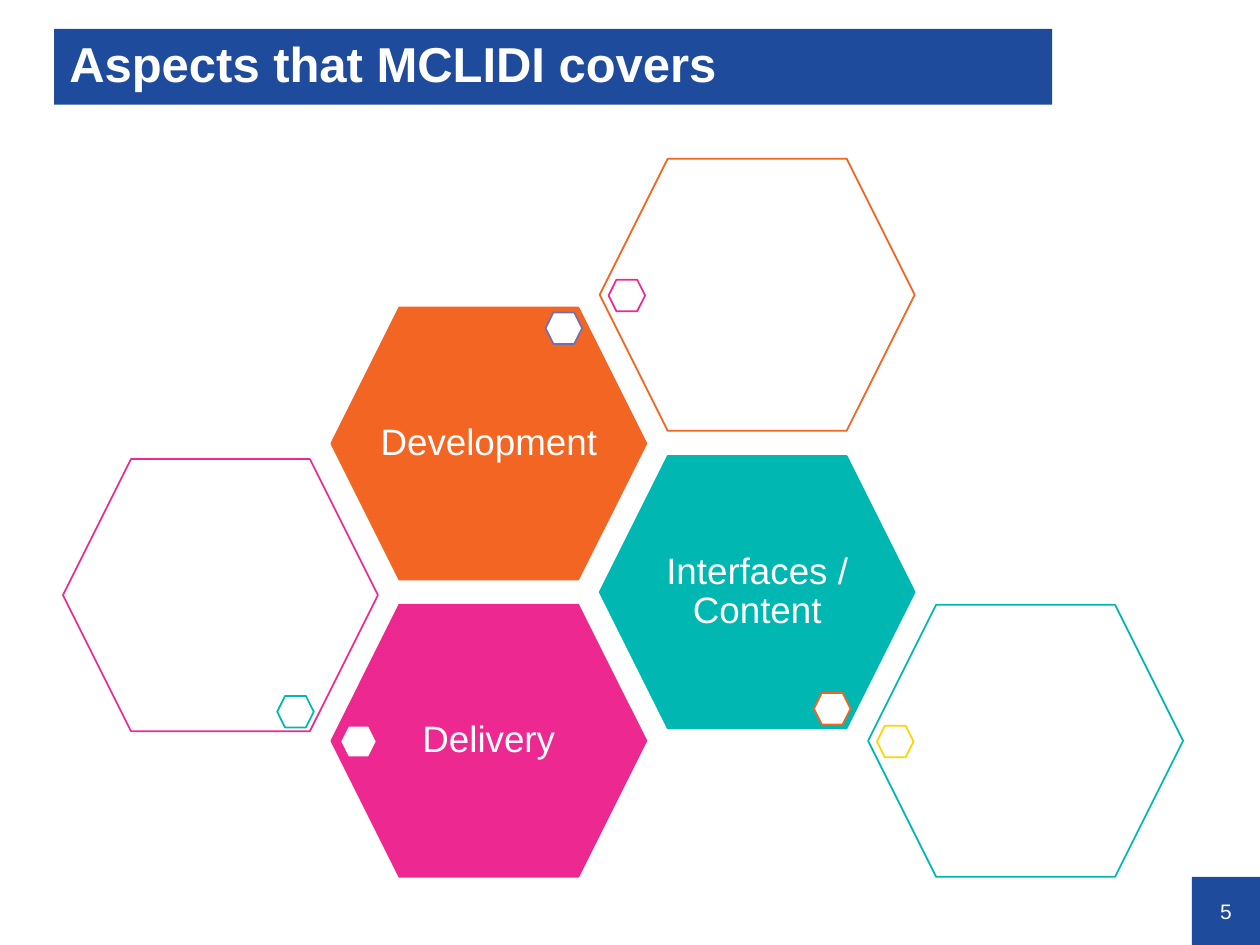
from pptx import Presentation
from pptx.dml.color import RGBColor
from pptx.enum.shapes import MSO_SHAPE as SHAPE
from pptx.enum.text import MSO_ANCHOR as ANCHOR, PP_ALIGN as ALIGN
from pptx.oxml.ns import qn
from pptx.util import Inches, Pt
from lxml import etree

TITLE = "Aspects that MCLIDI covers"
PAGE = "5"

THEME = {
    "font": "Arial",
    "navy": "1E4B9B", "white": "FFFFFF", "pink": "ED2891", "teal": "00B7B2",
    "orange": "F26522", "yellow": "FFD400", "violet": "716FB3",
    "title": 28, "label": 21, "page": 12,
}

# column, row, colour, label, dot corner, dot colour
CELLS = [
    (1, 3, "pink", "Delivery", "left", "pink"),
    (0, 2.02, "pink", None, "bottom", "teal"),
    (2, 2, "teal", "Interfaces / Content", "bottom", "orange"),
    (3, 3, "teal", None, "left", "yellow"),
    (1, 1, "orange", "Development", "top", "violet"),
    (2, 0, "orange", None, "left", "pink"),
]
ORIGIN = (0.5, 1.26)
STEP = (2.13, 1.18)
CELL = (2.5, 2.16)
DOT = (0.29, 0.25)
LABEL = (1.73, 1.49)
DOT_OFFSETS = {"left": (0.07, 0.96), "bottom": (1.7, 1.88), "top": (1.7, 0.04)}


def color(name):
    return RGBColor.from_string(THEME[name])


def box(x, y, size):
    return [Inches(v) for v in (x, y, *size)]


def paint(sp, fill):
    sp.fill.solid()
    sp.fill.fore_color.rgb = color(fill)


def write(sp, text, size, align=ALIGN.CENTER, bold=False, margins=(0, 0), spacing=None):
    tf = sp.text_frame
    tf.word_wrap = True
    tf.vertical_anchor = ANCHOR.MIDDLE
    tf.margin_left = tf.margin_right = Inches(margins[0])
    tf.margin_top = tf.margin_bottom = Inches(margins[1])
    tf.text = text
    p = tf.paragraphs[0]
    p.alignment = align
    p.line_spacing = spacing
    font = p.runs[0].font
    font.name, font.size, font.bold = THEME["font"], Pt(THEME[size]), bold
    font.color.rgb = color("white")


def hexagon(s, x, y, size, fill, line, opacity=None):
    sp = s.shapes.add_shape(SHAPE.HEXAGON, *box(x, y, size))
    sp.adjustments[0] = 0.25
    sp.shadow.inherit = False
    paint(sp, fill)
    sp.line.color.rgb = color(line)
    sp.line.width = Pt(1)
    if opacity:
        rgb = sp.fill._xPr.find(qn("a:solidFill"))[0]
        etree.SubElement(rgb, qn("a:alpha"), val=str(opacity * 1000))


def main():
    prs = Presentation()
    prs.slide_width, prs.slide_height = Inches(10), Inches(7.5)
    s = prs.slides.add_slide(prs.slide_layouts[5])

    title = s.shapes.title
    title.left, title.top, title.width, title.height = box(0.43, 0.23, (7.92, 0.6))
    paint(title, "navy")
    write(title, TITLE, "title", ALIGN.LEFT, True, (0.12, 0.04), 0.9)

    page = s.shapes.add_shape(SHAPE.RECTANGLE, *box(9.46, 6.96, (0.54, 0.54)))
    page.shadow.inherit = False
    page.line.fill.background()
    paint(page, "navy")
    write(page, PAGE, "page")

    for col, row, hue, label, corner, dot_hue in CELLS:
        x, y = ORIGIN[0] + col * STEP[0], ORIGIN[1] + row * STEP[1]
        if label:
            hexagon(s, x, y, CELL, hue, hue)
            left, top = (x + (CELL[0] - LABEL[0]) / 2, y + (CELL[1] - LABEL[1]) / 2)
            tb = s.shapes.add_textbox(*box(left, top, LABEL))
            write(tb, label, "label", margins=(0, 0.03), spacing=0.9)
        else:
            hexagon(s, x, y, CELL, "white", hue, opacity=90)
        dx, dy = DOT_OFFSETS[corner]
        hexagon(s, x + dx, y + dy, DOT, "white", dot_hue)

    prs.save("out.pptx")


if __name__ == "__main__":
    main()
